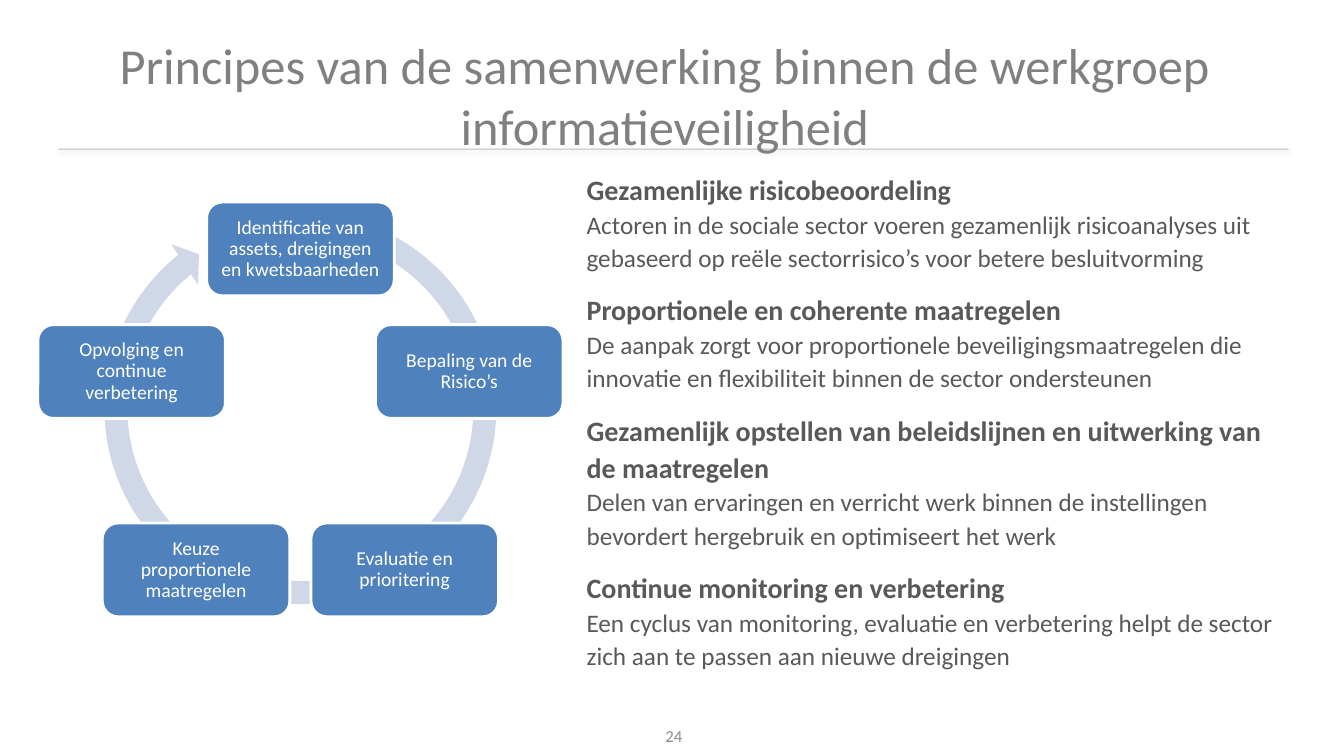
from math import cos, radians, sin

from lxml import etree
from pptx import Presentation
from pptx.dml.color import RGBColor
from pptx.enum.shapes import MSO_CONNECTOR, MSO_SHAPE
from pptx.enum.text import MSO_ANCHOR, PP_ALIGN
from pptx.oxml import parse_xml
from pptx.oxml.ns import nsdecls, qn
from pptx.util import Inches, Pt

STRAIGHT = MSO_CONNECTOR.STRAIGHT
ROUNDED, CIRCULAR_ARROW = MSO_SHAPE.ROUNDED_RECTANGLE, MSO_SHAPE.CIRCULAR_ARROW
TOP, MIDDLE = MSO_ANCHOR.TOP, MSO_ANCHOR.MIDDLE
LEFT, CENTER = PP_ALIGN.LEFT, PP_ALIGN.CENTER

TITLE = "Principes van de samenwerking binnen de werkgroep informatieveiligheid"
PAGE_NUMBER = "24"
PRINCIPLES = [
    ("Gezamenlijke risicobeoordeling",
     "Actoren in de sociale sector voeren gezamenlijk risicoanalyses uit "
     "gebaseerd op reële sectorrisico’s voor betere besluitvorming"),
    ("Proportionele en coherente maatregelen",
     "De aanpak zorgt voor proportionele beveiligingsmaatregelen die "
     "innovatie en flexibiliteit binnen de sector ondersteunen"),
    ("Gezamenlijk opstellen van beleidslijnen en uitwerking van de maatregelen",
     "Delen van ervaringen en verricht werk binnen de instellingen "
     "bevordert hergebruik en optimiseert het werk"),
    ("Continue monitoring en verbetering",
     "Een cyclus van monitoring, evaluatie en verbetering helpt de sector "
     "zich aan te passen aan nieuwe dreigingen"),
]
# Clockwise, starting at the top
CYCLE_STEPS = [
    "Identificatie van assets, dreigingen en kwetsbaarheden",
    "Bepaling van de Risico’s",
    "Evaluatie en prioritering",
    "Keuze proportionele maatregelen",
    "Opvolging en continue verbetering",
]
CENTER_X, CENTER_Y, RADIUS = 2.98, 4.23, 1.76
STEP_W, STEP_H = 1.86, 0.93
ARROW_BOX = (0.91, 1.98, 4.14, 4.14)
ARROW_ADJUSTMENTS = (0.055, 3.307, 138.684, 173.299, 0.058)


def rgb(value):
    return RGBColor.from_string(value)


def box(values):
    return [Inches(v) for v in values]


def add_paragraph(tf, text, size, color, bold=False, align=LEFT, spacing=1.0, before=0):
    first = not tf.paragraphs[0].runs
    p = tf.paragraphs[0] if first else tf.add_paragraph()
    p.alignment = align
    p.line_spacing = spacing
    p.space_before = Pt(0 if first else before)
    r = p.add_run()
    r.text = text
    r.font.name, r.font.size, r.font.bold = "Calibri", Pt(size), bold
    r.font.color.rgb = rgb(color)


def add_text_box(slide, at, anchor=TOP):
    tf = slide.shapes.add_textbox(*box(at)).text_frame
    tf.word_wrap = True
    tf.vertical_anchor = anchor
    return tf


def add_filled_shape(slide, kind, at, fill):
    sp = slide.shapes.add_shape(kind, *box(at))
    sp.shadow.inherit = False
    sp.fill.solid()
    sp.fill.fore_color.rgb = rgb(fill)
    sp.line.fill.background()
    return sp


def add_title_rule(slide):
    """Translucent hairline with a soft shadow below it."""
    rule = slide.shapes.add_connector(STRAIGHT, *box((0.58, 1.48, 12.78, 1.48)))
    rule.line.width = Pt(0.75)
    rule.line.color.rgb = rgb("000000")
    sp_pr = rule._element.spPr
    color = sp_pr.find(".//" + qn("a:srgbClr"))
    etree.SubElement(color, qn("a:alpha")).set("val", "25000")
    sp_pr.append(parse_xml(
        f'<a:effectLst {nsdecls("a")}>'
        f'<a:outerShdw blurRad="{Pt(3.1)}" dist="{Pt(1.6)}" dir="5400000" rotWithShape="0">'
        '<a:srgbClr val="000000"><a:alpha val="38000"/></a:srgbClr>'
        '</a:outerShdw></a:effectLst>'))


def add_cycle(slide):
    arrow = add_filled_shape(slide, CIRCULAR_ARROW, ARROW_BOX, "D0D8E8")
    for i, value in enumerate(ARROW_ADJUSTMENTS):
        arrow.adjustments[i] = value
    for i, text in enumerate(CYCLE_STEPS):
        angle = radians(i * 360 / len(CYCLE_STEPS))
        left = CENTER_X + RADIUS * sin(angle) - STEP_W / 2
        top = CENTER_Y - RADIUS * cos(angle) - STEP_H / 2
        sp = add_filled_shape(slide, ROUNDED, (left, top, STEP_W, STEP_H), "4F81BD")
        sp.line.color.rgb = rgb("FFFFFF")
        sp.line.width = Pt(2)
        tf = sp.text_frame
        tf.word_wrap = True
        tf.vertical_anchor = MIDDLE
        tf.margin_left = tf.margin_right = Inches(0.1)
        add_paragraph(tf, text, 14, "FFFFFF", align=CENTER, spacing=0.9)


def main():
    prs = Presentation()
    prs.slide_width, prs.slide_height = Inches(13.33), Inches(7.5)
    slide = prs.slides.add_slide(prs.slide_layouts[6])

    add_title_rule(slide)
    title = add_text_box(slide, (0.44, 0.29, 12.31, 1))
    add_paragraph(title, TITLE, 36, "808080", align=CENTER)

    body = add_text_box(slide, (5.72, 1.63, 7.03, 5.14))
    for heading, detail in PRINCIPLES:
        add_paragraph(body, heading, 20, "595959", bold=True, spacing=1.1, before=12)
        add_paragraph(body, detail, 18, "595959", spacing=1.1)

    number = add_text_box(slide, (5.13, 7.14, 3.11, 0.32), MIDDLE)
    add_paragraph(number, PAGE_NUMBER, 12, "8C8C8C", align=CENTER)

    add_cycle(slide)
    prs.save("out.pptx")


if __name__ == "__main__":
    main()
